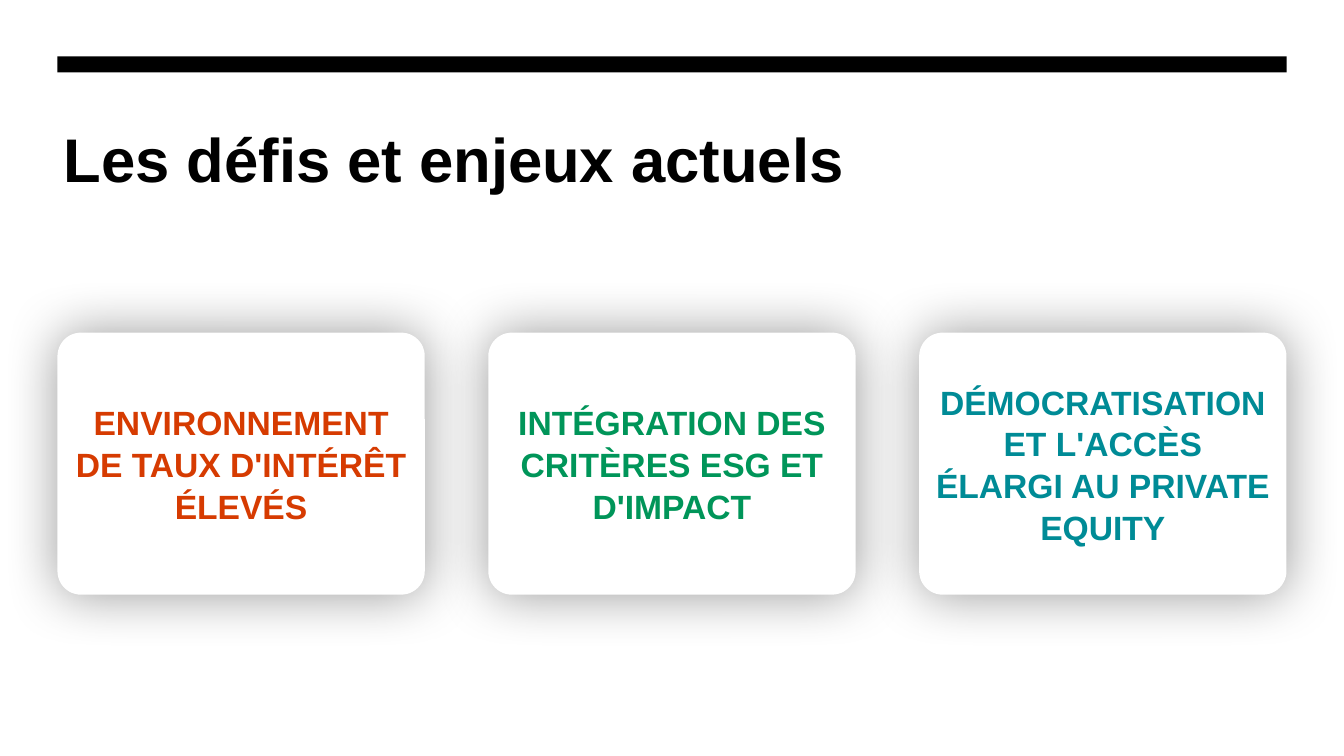
"""Builds the slide on the challenges of private equity."""
from dataclasses import dataclass

from lxml.etree import SubElement
from pptx import Presentation
from pptx.dml.color import RGBColor
from pptx.enum.shapes import MSO_SHAPE as Shape
from pptx.enum.text import MSO_ANCHOR as Anchor, MSO_AUTO_SIZE as AutoSize, PP_ALIGN as Align
from pptx.oxml.ns import qn
from pptx.util import Inches, Length, Pt

BLACK = RGBColor(0x00, 0x00, 0x00)
WHITE = RGBColor(0xFF, 0xFF, 0xFF)
ORANGE = RGBColor(0xD6, 0x3B, 0x01)
GREEN = RGBColor(0x00, 0x95, 0x59)
TEAL = RGBColor(0x00, 0x8B, 0x96)

FONT = "Arial"
WIDTH, HEIGHT = Inches(13.33), Inches(7.5)
MARGIN, GAP = Inches(0.57), Inches(0.63)
CONTENT = WIDTH - 2 * MARGIN
ROW = HEIGHT / 75


@dataclass(frozen=True)
class Card:
    """One challenge and its text colour."""
    text: str
    color: RGBColor


CARDS = [
    Card("ENVIRONNEMENT DE TAUX D'INTÉRÊT ÉLEVÉS", ORANGE),
    Card("INTÉGRATION DES CRITÈRES ESG ET D'IMPACT", GREEN),
    Card("DÉMOCRATISATION ET L'ACCÈS ÉLARGI AU PRIVATE EQUITY", TEAL),
]
CARD_WIDTH = (CONTENT - GAP * (len(CARDS) - 1)) / len(CARDS)


def rows(count: float) -> Length:
    """Return the height of a number of grid rows."""
    return Length(round(count * ROW))


def write(p, text: str, size: int, color: RGBColor, align: Align) -> None:
    """Fill a paragraph with bold text."""
    p.text, p.alignment = text, align
    p.font.name, p.font.size, p.font.bold = FONT, Pt(size), True
    p.font.color.rgb = color


def add_block(s, kind: Shape, left: float, top: float, width: float, height: float, fill: RGBColor):
    """Add a plain filled shape without outline or shadow."""
    sp = s.shapes.add_shape(kind, round(left), rows(top), round(width), rows(height))
    sp.shadow.inherit = False
    sp.fill.solid()
    sp.fill.fore_color.rgb = fill
    sp.line.fill.background()
    return sp


def add_glow_shadow(sp, color: RGBColor, blur: float, alpha: int) -> None:
    """Give a shape a soft shadow on all sides."""
    effects = sp._element.spPr.find(qn("a:effectLst"))
    shadow = SubElement(effects, qn("a:outerShdw"), blurRad=str(Pt(blur)), dist="0",
                        dir="0", algn="ctr", rotWithShape="0")
    tint = SubElement(shadow, qn("a:srgbClr"), val=str(color))
    SubElement(tint, qn("a:alpha"), val=str(alpha * 1000))


def add_title(s, text: str) -> None:
    """Place and format the title placeholder."""
    sp = s.shapes.title
    sp.left, sp.top, sp.width, sp.height = MARGIN, rows(10.7), CONTENT, rows(16)
    tf = sp.text_frame
    tf.auto_size, tf.vertical_anchor = AutoSize.NONE, Anchor.TOP
    tf.margin_left, tf.margin_top = Inches(0.06), Inches(0.13)
    write(tf.paragraphs[0], text, 44, BLACK, Align.LEFT)


def add_card(s, column: int, card: Card) -> None:
    """Add a rounded card in the given column."""
    left = MARGIN + column * (CARD_WIDTH + GAP)
    sp = add_block(s, Shape.ROUNDED_RECTANGLE, left, 33, CARD_WIDTH, 26, WHITE)
    sp.adjustments[0] = 0.09
    add_glow_shadow(sp, BLACK, 39.2, 40)
    tf = sp.text_frame
    tf.word_wrap, tf.vertical_anchor = True, Anchor.MIDDLE
    p = tf.paragraphs[0]
    p.line_spacing = 1.04
    write(p, card.text, 24, card.color, Align.CENTER)


def main() -> None:
    """Build and save the slide."""
    prs = Presentation()
    prs.slide_width, prs.slide_height = WIDTH, HEIGHT
    s = prs.slides.add_slide(prs.slide_layouts[5])
    add_block(s, Shape.RECTANGLE, MARGIN, 5.6, CONTENT, 1.6, BLACK)
    add_title(s, "Les défis et enjeux actuels")
    for column, card in enumerate(CARDS):
        add_card(s, column, card)
    prs.save("out.pptx")


if __name__ == "__main__":
    main()
